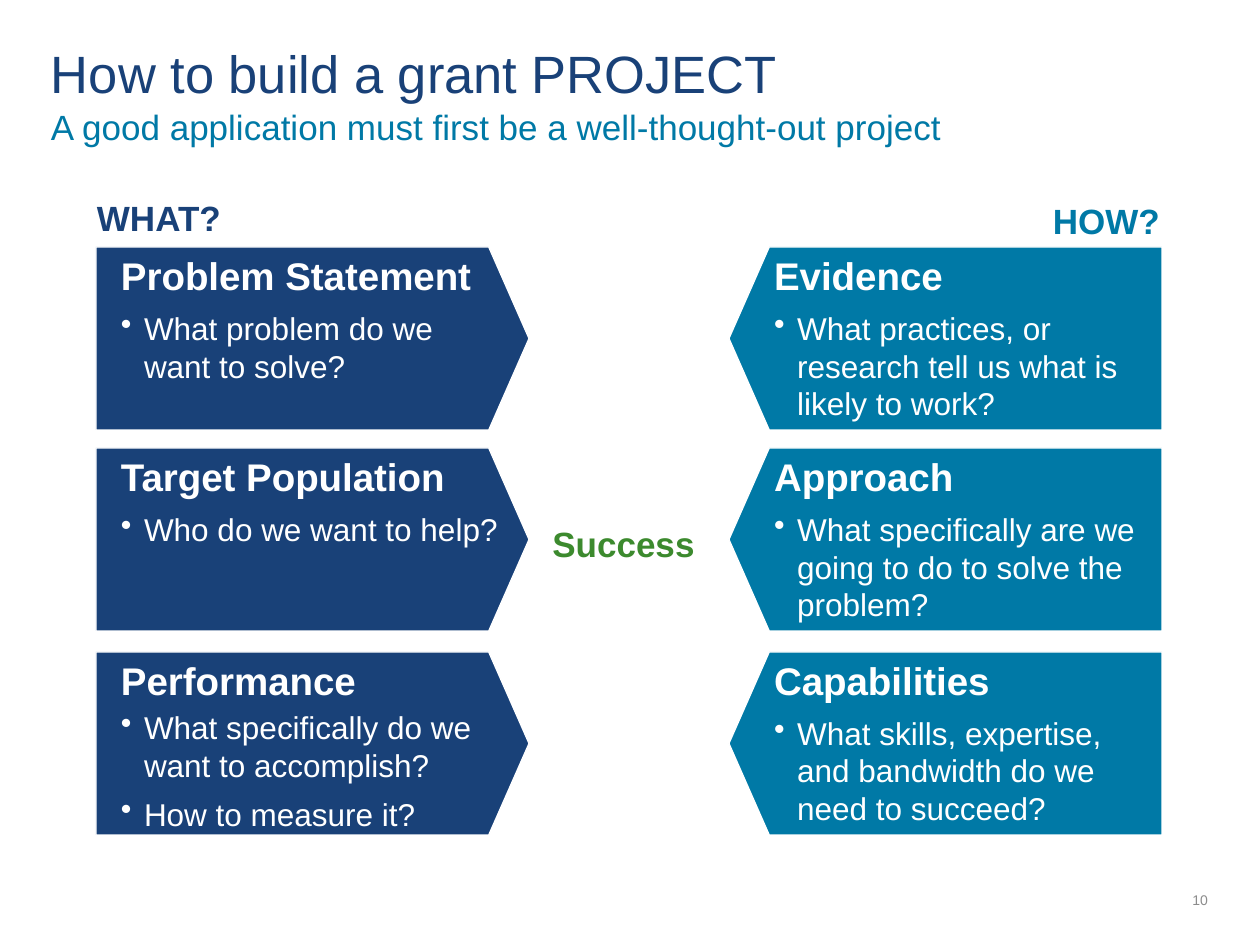
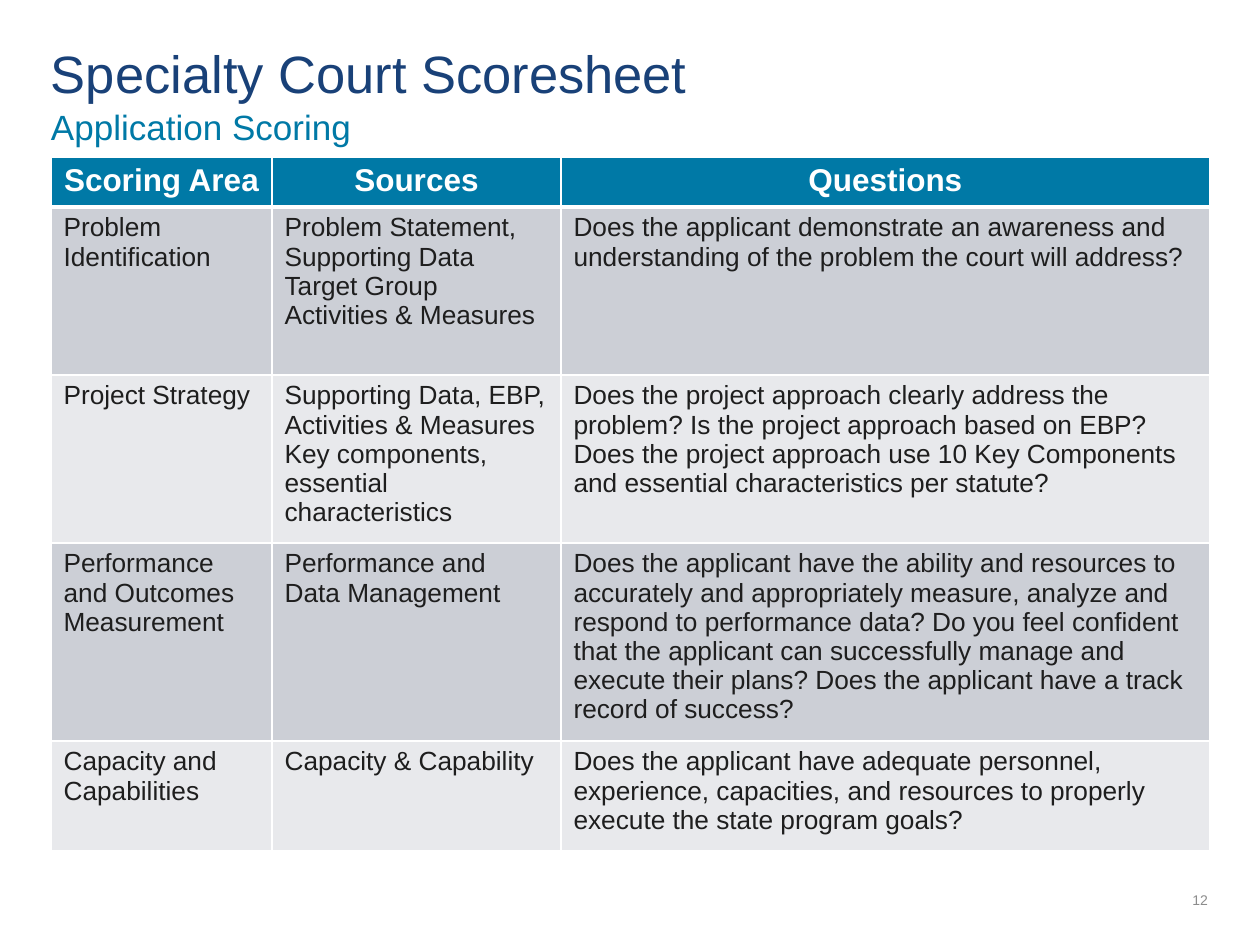
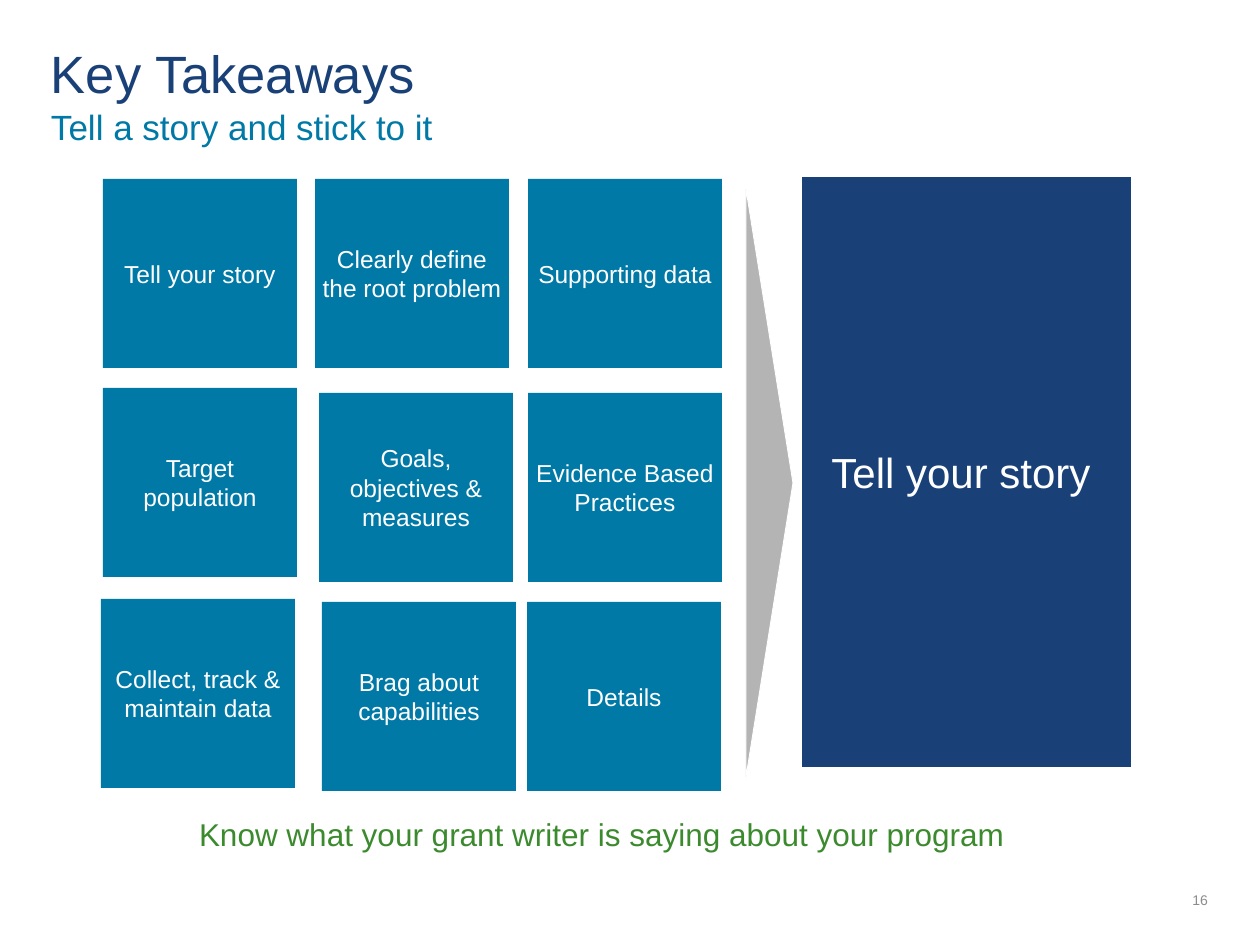
import pptx
import pptx.dml.color
import pptx.enum.shapes
import pptx.enum.text
import pptx.oxml
import pptx.oxml.ns
import pptx.util

COLORS = {"navy": "194178", "teal": "0079A6", "green": "3C8A2E", "white": "FFFFFF", "ink": "1E1E1E",
          "number": "8C8C8C", "arrow": "B4B4B4", "band_dark": "CCCFD6", "band_light": "E8E9EC"}
FONT = "Arial"
PX = 914400 / 126
ALIGN = pptx.enum.text.PP_ALIGN
ANCHOR = pptx.enum.text.MSO_ANCHOR
SHAPE = pptx.enum.shapes.MSO_SHAPE

HEADINGS = [
    ("How to build a grant PROJECT", "A good application must first be a well-thought-out project", 10),
    ("Specialty Court Scoresheet", "Application Scoring", 12),
    ("Key Takeaways", "Tell a story and stick to it", 16),
]

WHAT = [
    ("Problem Statement", ["What problem do we want to solve?"]),
    ("Target Population", ["Who do we want to help?"]),
    ("Performance", ["What specifically do we want to accomplish?", "How to measure it?"]),
]
HOW = [
    ("Evidence", ["What practices, or research tell us what is likely to work?"]),
    ("Approach", ["What specifically are we going to do to solve the problem?"]),
    ("Capabilities", ["What skills, expertise, and bandwidth do we need to succeed?"]),
]
SIDES = [
    {"label": "WHAT?", "label_box": (84, 190, 242, 55), "align": ALIGN.LEFT,
     "left": 96, "color": "navy", "steps": WHAT, "flip": False},
    {"label": "HOW?", "label_box": (931, 193, 242, 55), "align": ALIGN.RIGHT,
     "left": 729, "color": "teal", "steps": HOW, "flip": True},
]
STEP_TOPS = [247, 448, 652]

SCORE_COLUMNS = [("Scoring Area", 221), ("Sources", 289), ("Questions", 649)]
SCORE_HEIGHTS = [50, 168, 168, 198, 110]
SCORES = [
    (["Problem Identification"],
     ["Problem Statement, Supporting Data", "Target Group", "Activities & Measures"],
     ["Does the applicant demonstrate an awareness and understanding of the problem the court will address?"]),
    (["Project Strategy"],
     ["Supporting Data, EBP,", "Activities & Measures", "Key components, essential characteristics"],
     ["Does the project approach clearly address the problem? Is the project approach based on EBP? "
      "Does the project approach use 10 Key Components and essential characteristics per statute?"]),
    (["Performance and Outcomes Measurement"],
     ["Performance and Data Management"],
     ["Does the applicant have the ability and resources to accurately and appropriately measure, analyze and "
      "respond to performance data? Do you feel confident that the applicant can successfully manage and "
      "execute their plans? Does the applicant have a track record of success?"]),
    (["Capacity and Capabilities"],
     ["Capacity & Capability"],
     ["Does the applicant have adequate personnel, experience, capacities, and resources to properly "
      "execute the state program goals?"]),
]

TAKEAWAYS = [
    ("Tell your story", 103, 179), ("Clearly define the root problem", 315, 179), ("Supporting data", 528, 179),
    ("Target population", 103, 388), ("Goals, objectives & measures", 319, 393),
    ("Evidence Based Practices", 528, 393),
    ("Collect, track & maintain data", 101, 599), ("Brag about capabilities", 322, 602), ("Details", 527, 602),
]


def emu(px):
    """Turn px into EMU."""
    return pptx.util.Emu(round(px * PX))


def rgb(name):
    """Look up a colour by name."""
    return pptx.dml.color.RGBColor.from_string(COLORS[name])


def assign(target, values):
    """Set each named value on the target."""
    for name, value in values.items():
        setattr(target, name, value)


def place(part, box):
    """Move a part to its box in px."""
    assign(part, dict(zip(("left", "top", "width", "height"), map(emu, box))))


def write(paragraph, text, size, color, bold=False, **layout):
    """Put one formatted run into a paragraph."""
    assign(paragraph, layout)
    run = paragraph.add_run()
    run.text = text
    assign(run.font, {"name": FONT, "size": pptx.util.Pt(size), "bold": bold})
    run.font.color.rgb = rgb(color)


def frame_up(frame, insets=(0, 0, 0, 0), anchor=ANCHOR.TOP):
    """Set wrapping, insets and anchor of a text frame."""
    sides = ("margin_left", "margin_top", "margin_right", "margin_bottom")
    assign(frame, {"word_wrap": True, "auto_size": pptx.enum.text.MSO_AUTO_SIZE.NONE, "vertical_anchor": anchor})
    assign(frame, dict(zip(sides, map(emu, insets))))
    return frame


def add_label(slide, box, text, size, color, insets=(0, 0, 0, 0), anchor=ANCHOR.TOP, **layout):
    """Add a one-paragraph text box."""
    frame = frame_up(slide.shapes.add_textbox(*map(emu, box)).text_frame, insets, anchor)
    write(frame.paragraphs[0], text, size, color, **layout)


def add_block(slide, kind, box, fill, line_width=0):
    """Add a flat filled shape with an optional white line."""
    block = slide.shapes.add_shape(kind, *map(emu, box))
    block.shadow.inherit = False
    block.fill.solid()
    block.fill.fore_color.rgb = rgb(fill)
    if line_width:
        block.line.color.rgb = rgb("white")
        block.line.width = pptx.util.Pt(line_width)
    else:
        block.line.fill.background()
    return block


def add_bullet(paragraph):
    """Give a paragraph a hanging round bullet."""
    properties = paragraph._p.get_or_add_pPr()
    properties.set("marL", str(emu(23)))
    properties.set("indent", str(-emu(23)))
    bullet = pptx.oxml.parse_xml(f'<a:buChar {pptx.oxml.ns.nsdecls("a")} char="•"/>')
    properties.append(bullet)


def add_step(slide, side, top, heading, questions):
    """Add one pentagon with a heading and its bulleted questions."""
    step = add_block(slide, SHAPE.PENTAGON, (side["left"], top, 433, 183), side["color"], 0.75)
    step.adjustments[0] = 0.22
    if side["flip"]:
        step._element.spPr.xfrm.set("flipH", "1")
    frame = frame_up(step.text_frame, (25, 5, 5, 5))
    write(frame.paragraphs[0], heading, 22, "white", True, alignment=ALIGN.LEFT)
    for index, question in enumerate(questions):
        tight = index < len(questions) - 1
        paragraph = frame.add_paragraph()
        write(paragraph, question, 18, "white", alignment=ALIGN.LEFT,
              space_before=pptx.util.Pt(3 if tight else 6))
        add_bullet(paragraph)


def add_border(cell, bottom):
    """Draw white lines around a cell."""
    properties = cell._tc.get_or_add_tcPr()
    for index, (side, points) in enumerate(zip("LRTB", (1, 1, 1, bottom))):
        properties.insert(index, pptx.oxml.parse_xml(
            f'<a:ln{side} {pptx.oxml.ns.nsdecls("a")} w="{points * 12700}"><a:solidFill>'
            f'<a:srgbClr val="{COLORS["white"]}"/></a:solidFill></a:ln{side}>'))


def fill_cell(cell, lines, fill, bottom, **style):
    """Write, fill and outline a table cell."""
    cell.fill.solid()
    cell.fill.fore_color.rgb = rgb(fill)
    add_border(cell, bottom)
    for index, line in enumerate(lines):
        paragraph = cell.text_frame.add_paragraph() if index else cell.text_frame.paragraphs[0]
        write(paragraph, line, **style)


def add_headed_slide(deck, title, subtitle, number):
    """Add a slide with title, subtitle and page number."""
    slide = deck.slides.add_slide(deck.slide_layouts[5])
    heading = slide.shapes.title
    place(heading, (51, 40, 1155, 64))
    frame = frame_up(heading.text_frame, anchor=ANCHOR.BOTTOM)
    write(frame.paragraphs[0], title, 30, "navy", alignment=ALIGN.LEFT)
    add_label(slide, (51, 106, 1155, 63), subtitle, 20, "teal")
    add_label(slide, (1099, 882, 109, 35), str(number), 8, "number",
              anchor=ANCHOR.MIDDLE, alignment=ALIGN.RIGHT)
    return slide


def build_project(slide):
    """Set the what and how steps around success."""
    add_label(slide, (517, 237, 213, 612), "Success", 20, "green", (5, 5, 5, 5), ANCHOR.MIDDLE,
              bold=True, alignment=ALIGN.CENTER)
    for side in SIDES:
        for top, (heading, questions) in zip(STEP_TOPS, side["steps"]):
            add_step(slide, side, top, heading, questions)
        add_label(slide, side["label_box"], side["label"], 20, side["color"], (13, 6, 13, 6),
                  bold=True, alignment=side["align"])


def build_scoresheet(slide):
    """Set the scoring table."""
    widths = [width for _, width in SCORE_COLUMNS]
    box = (51, 157, sum(widths), sum(SCORE_HEIGHTS))
    table = slide.shapes.add_table(len(SCORE_HEIGHTS), len(widths), *map(emu, box)).table
    assign(table, {"first_row": False, "horz_banding": False})
    for column, width in zip(table.columns, widths):
        column.width = emu(width)
    for row, height in zip(table.rows, SCORE_HEIGHTS):
        row.height = emu(height)
    for column, (name, _) in enumerate(SCORE_COLUMNS):
        fill_cell(table.cell(0, column), [name], "teal", 3, size=18, color="white", bold=True,
                  alignment=ALIGN.CENTER)
    for row, score in enumerate(SCORES, 1):
        band = "band_dark" if row % 2 else "band_light"
        for column, lines in enumerate(score):
            fill_cell(table.cell(row, column), lines, band, 1, size=15, color="ink")


def build_takeaways(slide):
    """Set the tiles that lead to the story."""
    for text, left, top in TAKEAWAYS:
        tile = add_block(slide, SHAPE.RECTANGLE, (left, top, 194, 189), "teal")
        frame = frame_up(tile.text_frame, (5, 5, 5, 5), ANCHOR.MIDDLE)
        write(frame.paragraphs[0], text, 14, "white", alignment=ALIGN.CENTER)
    arrow = add_block(slide, SHAPE.PENTAGON, (746, 189, 47, 588), "arrow", 0.5)
    arrow.adjustments[0] = 1
    story = add_block(slide, SHAPE.RECTANGLE, (801, 176, 331, 592), "navy", 1.5)
    frame = frame_up(story.text_frame, (5, 5, 16, 5), ANCHOR.MIDDLE)
    write(frame.paragraphs[0], "Tell your story", 24, "white", alignment=ALIGN.CENTER)
    add_label(slide, (186, 809, 874, 50), "Know what your grant writer is saying about your program",
              18, "green", (13, 6, 13, 6))


def main():
    """Build and save the deck."""
    deck = pptx.Presentation()
    assign(deck, {"slide_width": emu(1260), "slide_height": emu(945)})
    for heading, build in zip(HEADINGS, (build_project, build_scoresheet, build_takeaways)):
        build(add_headed_slide(deck, *heading))
    deck.save("out.pptx")


if __name__ == "__main__":
    main()
